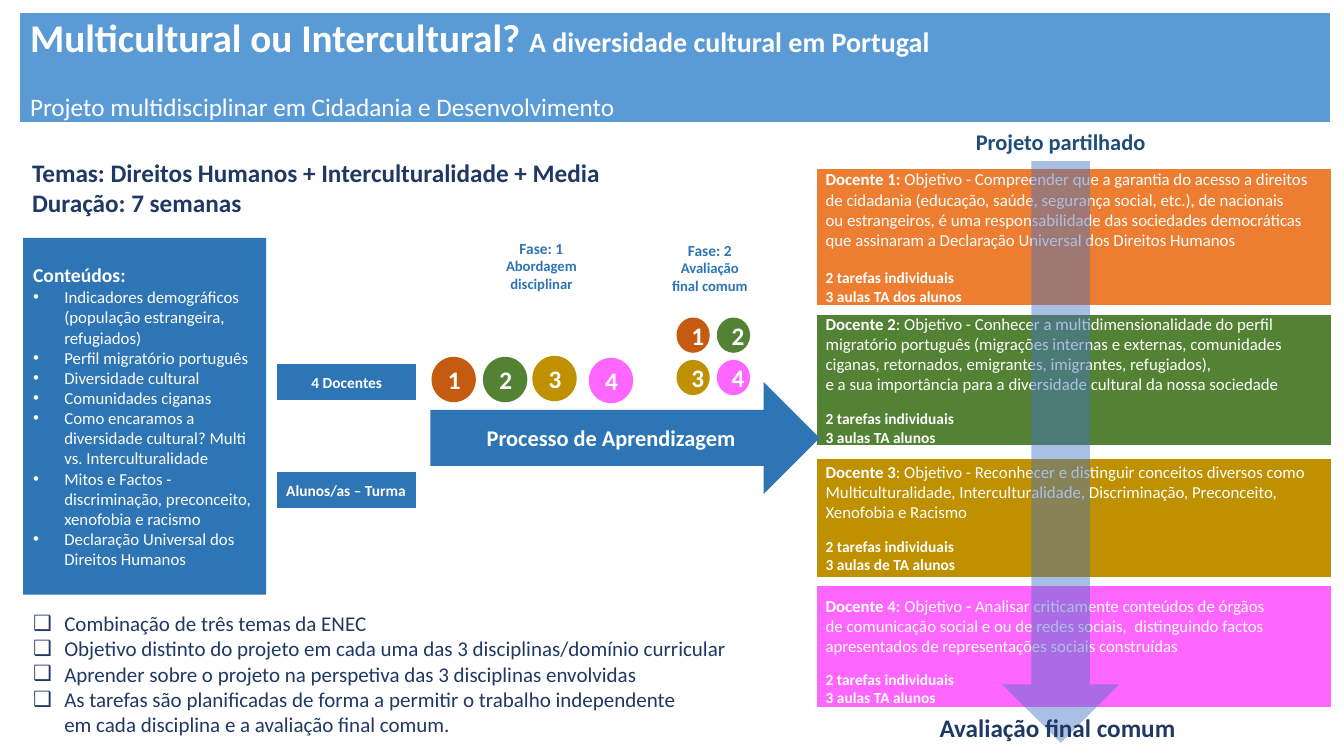
from lxml import etree
from pptx import Presentation
from pptx.dml.color import RGBColor
from pptx.enum.shapes import MSO_SHAPE
from pptx.enum.text import MSO_ANCHOR, PP_ALIGN
from pptx.oxml.ns import qn
from pptx.util import Inches, Pt

RECTANGLE = MSO_SHAPE.RECTANGLE
CIRCLE = MSO_SHAPE.FLOWCHART_CONNECTOR
RIGHT_ARROW = MSO_SHAPE.RIGHT_ARROW
DOWN_ARROW = MSO_SHAPE.DOWN_ARROW
MIDDLE = MSO_ANCHOR.MIDDLE
TOP = MSO_ANCHOR.TOP
LEFT = PP_ALIGN.LEFT
CENTER = PP_ALIGN.CENTER

FONT = "Calibri"
WHITE = RGBColor(0xFF, 0xFF, 0xFF)
SKY = RGBColor(0x5B, 0x9B, 0xD5)
BLUE = RGBColor(0x2E, 0x75, 0xB6)
NAVY = RGBColor(0x20, 0x38, 0x64)
DARK_BLUE = RGBColor(0x1F, 0x4E, 0x79)
ARROW_BLUE = RGBColor(0x44, 0x72, 0xC4)
ORANGE = RGBColor(0xED, 0x7D, 0x31)
RUST = RGBColor(0xC5, 0x5A, 0x11)
GREEN = RGBColor(0x54, 0x82, 0x35)
GOLD = RGBColor(0xBF, 0x90, 0x00)
PINK = RGBColor(0xFF, 0x66, 0xFF)
TEACHER_COLORS = [RUST, GREEN, GOLD, PINK]

CONTENTS = [
    "Indicadores demográficos (população estrangeira, refugiados)",
    "Perfil migratório português",
    "Diversidade cultural",
    "Comunidades ciganas",
    "Como encaramos a diversidade cultural? Multi vs. Interculturalidade",
    "Mitos e Factos - discriminação, preconceito, xenofobia e racismo",
    "Declaração Universal dos Direitos Humanos",
]
FEATURES = [
    "Combinação de três temas da ENEC",
    "Objetivo distinto do projeto em cada uma das 3 disciplinas/domínio curricular",
    "Aprender sobre o projeto na perspetiva das 3 disciplinas envolvidas",
    "As tarefas são planificadas de forma a permitir o trabalho independente\n"
    "em cada disciplina e a avaliação final comum.",
]
TEACHERS = [
    (0, 1.37, ORANGE, 13.4, 0, "3 aulas TA dos alunos", [
        ("Docente 1: ", 12, True),
        ("Objetivo - Compreender que a garantia do acesso a direitos de cidadania "
         "(educação, saúde, segurança social, etc.), de nacionais\n"
         "ou estrangeiros, é uma responsabilidade das sociedades democráticas\n"
         "que assinaram a Declaração Universal dos Direitos Humanos", 12, False)]),
    (1.44, 1.32, GREEN, 11, 0, "3 aulas TA alunos", [
        ("Docente 2", 12, True),
        (": Objetivo - Conhecer a multidimensionalidade do perfil migratório português "
         "(migrações internas e externas, comunidades ciganas, retornados, emigrantes, "
         "imigrantes, refugiados),\n"
         "e a sua importância para a diversidade cultural da nossa sociedade", 12, False)]),
    (2.87, 1.19, GOLD, 11, 0, "3 aulas de TA alunos", [
        ("Docente 3", 12, True),
        (": Objetivo - Reconhecer e distinguir conceitos diversos como Multiculturalidade, "
         "Interculturalidade, Discriminação, Preconceito, Xenofobia e Racismo", 12, False)]),
    (4.13, 1.22, PINK, 9.8, 0.1, "3 aulas TA alunos", [
        ("Docente 4: ", 12, True), ("Objetivo ", 12, False), ("- ", 12, True),
        ("Analisar criticamente conteúdos de órgãos\n"
         "de comunicação social e ou de redes sociais,  distinguindo factos apresentados "
         "de representações sociais construídas", 12, False)]),
]


def add_paragraph(frame, runs, color=WHITE, align=LEFT, bullet=None, before=0):
    """Append a paragraph of (text, size, bold) runs; a newline is a line break."""
    paragraph = frame.paragraphs[0]
    if paragraph.runs:
        paragraph = frame.add_paragraph()
    paragraph.alignment = align
    paragraph.space_before = Pt(before)
    if bullet:
        properties = paragraph._p.get_or_add_pPr()
        properties.set("marL", str(Inches(0.31)))
        properties.set("indent", str(Inches(-0.31)))
        etree.SubElement(properties, qn("a:buFont")).set("typeface", "Arial")
        etree.SubElement(properties, qn("a:buChar")).set("char", bullet)
    for text, size, bold in runs:
        for index, line in enumerate(text.split("\n")):
            if index:
                paragraph.add_line_break()
            run = paragraph.add_run()
            run.text = line
            run.font.name = FONT
            run.font.size = Pt(size)
            run.font.bold = bold
            run.font.color.rgb = color


def add_block(slide, kind, box, fill, outlined=False):
    """Add a filled preset shape and return it."""
    shape = slide.shapes.add_shape(kind, *map(Inches, box))
    shape.shadow.inherit = False
    shape.fill.solid()
    shape.fill.fore_color.rgb = fill
    if outlined:
        shape.line.color.rgb = WHITE
        shape.line.width = Pt(1.5)
    else:
        shape.line.fill.background()
    shape.text_frame.word_wrap = True
    shape.text_frame.vertical_anchor = MIDDLE
    return shape


def add_label(slide, box, lines, color, align=LEFT, bullet=None):
    """Add a text box with one (text, size, bold) run per paragraph."""
    frame = slide.shapes.add_textbox(*map(Inches, box)).text_frame
    frame.word_wrap = True
    frame.vertical_anchor = TOP
    for line in lines:
        add_paragraph(frame, [line], color, align, bullet)


def add_header(slide, box):
    """Draw the title band."""
    frame = add_block(slide, RECTANGLE, box, SKY).text_frame
    add_paragraph(frame, [("Multicultural ou Intercultural? ", 28, True),
                          ("A diversidade cultural em Portugal", 20, True)])
    add_paragraph(frame, [("Projeto multidisciplinar em Cidadania e Desenvolvimento", 18, False)],
                  before=22)


def add_contents(slide, box):
    """Draw the panel that lists the contents."""
    frame = add_block(slide, RECTANGLE, box, BLUE).text_frame
    add_paragraph(frame, [("Conteúdos:", 14, True)])
    for item in CONTENTS:
        add_paragraph(frame, [(item, 12, False)], bullet="•")


def add_teachers(slide, left, top, width):
    """Draw the stack of teacher panels."""
    for offset, height, color, gap, lowering, lessons, goal in TEACHERS:
        box = (left, top + offset, width, height)
        frame = add_block(slide, RECTANGLE, box, color, outlined=True).text_frame
        frame.margin_top = Inches(0.05 + lowering)
        add_paragraph(frame, goal)
        add_paragraph(frame, [("2 tarefas individuais", 11, True)], before=gap)
        add_paragraph(frame, [(lessons, 11, True)])


def add_circle(slide, box, number):
    """Draw the numbered circle of one teacher."""
    shape = add_block(slide, CIRCLE, box, TEACHER_COLORS[number - 1])
    add_paragraph(shape.text_frame, [(str(number), 18, True)], align=CENTER)


def add_process(slide, left, top):
    """Draw the participants, the phases and the learning arrow."""
    for offset, text, align in [(1.28, "4 Docentes", CENTER), (2.35, "Alunos/as – Turma", LEFT)]:
        shape = add_block(slide, RECTANGLE, (left, top + offset, 1.4, 0.38), BLUE, outlined=True)
        add_paragraph(shape.text_frame, [(text, 11, True)], align=align)
    arrow = add_block(slide, RIGHT_ARROW, (left + 1.53, top + 1.47, 3.86, 1.11), BLUE)
    add_paragraph(arrow.text_frame, [("Processo de Aprendizagem", 16, True)], align=CENTER)
    row = [(1.54, 1.22), (2.05, 1.22), (2.54, 1.21), (3.1, 1.23)]
    for index, (across, down) in enumerate(row):
        add_circle(slide, (left + across, top + down, 0.44, 0.45), index + 1)
        grid_left = left + 3.97 + index % 2 * 0.4
        grid_top = top + 0.83 + index // 2 * 0.42
        add_circle(slide, (grid_left, grid_top, 0.33, 0.35), index + 1)
    add_label(slide, (left + 2.1, top, 1.06, 0.64),
              [("Fase: 1", 11, True), ("Abordagem disciplinar", 10.5, True)], BLUE, CENTER)
    add_label(slide, (left + 3.81, top + 0.02, 0.98, 0.64),
              [("Fase: 2", 11, True), ("Avaliação final comum", 10.5, True)], BLUE, CENTER)


def add_shared_project(slide, left, top):
    """Draw the translucent arrow from the shared project to the assessment."""
    arrow = add_block(slide, DOWN_ARROW, (left + 0.72, top + 0.38, 1.16, 5.77), ARROW_BLUE)
    color = arrow._element.spPr.find(qn("a:solidFill"))[0]
    etree.SubElement(color, qn("a:alpha")).set("val", "45000")
    add_label(slide, (left, top + 5.8, 2.61, 0.4), [("Avaliação final comum", 18, True)], NAVY)
    add_label(slide, (left + 0.36, top, 2.18, 0.37), [("Projeto partilhado", 16, True)], DARK_BLUE)


def main():
    """Build the slide and save it."""
    presentation = Presentation()
    presentation.slide_width = Inches(13.33)
    presentation.slide_height = Inches(7.5)
    slide = presentation.slides.add_slide(presentation.slide_layouts[6])
    add_header(slide, (0.2, 0.13, 12.99, 1.08))
    add_label(slide, (0.22, 1.51, 6.24, 0.71),
              [("Temas: Direitos Humanos + Interculturalidade + Media", 18, True),
               ("Duração: 7 semanas", 18, True)], NAVY)
    add_contents(slide, (0.23, 2.36, 2.41, 3.54))
    add_teachers(slide, 8.09, 1.67, 5.12)
    add_label(slide, (0.23, 6.01, 7.57, 1.36),
              [(feature, 15, False) for feature in FEATURES], NAVY, bullet="❑")
    add_process(slide, 2.74, 2.32)
    add_shared_project(slide, 9.22, 1.22)
    presentation.save("out.pptx")


if __name__ == "__main__":
    main()
